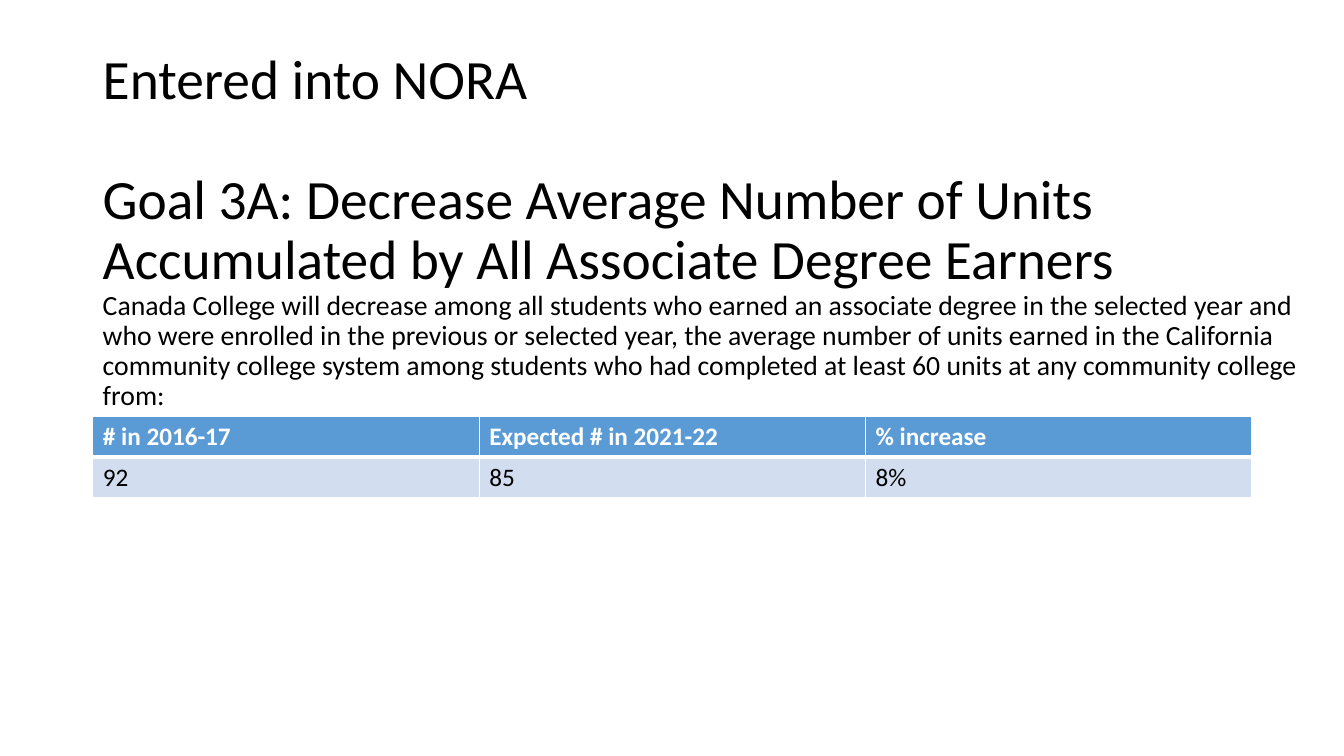
from lxml import etree
from pptx import Presentation
from pptx import util as u
from pptx.dml.color import RGBColor
from pptx.enum import text
from pptx.oxml import ns

BLACK = RGBColor(0x00, 0x00, 0x00)
WHITE = RGBColor(0xFF, 0xFF, 0xFF)
HEADER_BLUE = RGBColor(0x5B, 0x9B, 0xD5)
BODY_BLUE = RGBColor(0xD2, 0xDE, 0xEF)

LEFT = u.Cm(2.34)
HEADING_SIZE = 39.6
DETAIL_SIZE = 19.8
BLANK_LINE = 43

TITLE = [
    ("Entered into NORA", HEADING_SIZE, BLANK_LINE),
    ("Goal 3A: Decrease Average Number of Units Accumulated by All "
     "Associate Degree Earners", HEADING_SIZE, 0),
    ("Canada College will decrease among all students who earned an associate "
     "degree in the selected year and who were enrolled in the previous or "
     "selected year, the average number of units earned in the California "
     "community college system among students who had completed at least 60 "
     "units at any community college from:", DETAIL_SIZE, 0),
]
ROWS = [
    ("# in 2016-17", "Expected # in 2021-22", "% increase"),
    ("92", "85", "8%"),
]
ROW_STYLES = [
    {"fill": HEADER_BLUE, "color": WHITE, "bold": True,
     "borders": {"lnL": 1, "lnR": 1, "lnT": 1, "lnB": 3}},
    {"fill": BODY_BLUE, "color": BLACK, "bold": False,
     "borders": {"lnL": 1, "lnR": 1, "lnT": 3, "lnB": 1}},
]


def set_attributes(target, values):
    """Set each named attribute on the target."""
    for name, value in values.items():
        setattr(target, name, value)


def write_run(paragraph, content, size, color, bold=False):
    """Add one formatted run to a paragraph."""
    run = paragraph.add_run()
    run.text = content
    set_attributes(run.font, {"name": "Calibri", "size": u.Pt(size), "bold": bold})
    run.font.color.rgb = color


def add_title(slide):
    """Add the goal heading with its description."""
    shape = slide.shapes.add_textbox(LEFT, u.Cm(3.99), u.Cm(30.73), u.Cm(3.68))
    frame = shape.text_frame
    set_attributes(frame, {"word_wrap": True,
                           "auto_size": text.MSO_AUTO_SIZE.NONE,
                           "vertical_anchor": text.MSO_ANCHOR.MIDDLE})
    for index, (content, size, gap) in enumerate(TITLE):
        paragraph = frame.add_paragraph() if index else frame.paragraphs[0]
        set_attributes(paragraph, {"line_spacing": 0.9, "space_before": u.Pt(0),
                                   "space_after": u.Pt(gap)})
        write_run(paragraph, content, size, BLACK)


def set_borders(cell, widths):
    """Draw white cell borders with the given widths in points."""
    properties = cell._tc.get_or_add_tcPr()
    for position, (side, width) in enumerate(widths.items()):
        line = etree.Element(ns.qn(f"a:{side}"), w=str(u.Pt(width)))
        fill = etree.SubElement(line, ns.qn("a:solidFill"))
        etree.SubElement(fill, ns.qn("a:srgbClr"), val=str(WHITE))
        properties.insert(position, line)


def add_goal_table(slide):
    """Add the table of starting and expected values."""
    table = slide.shapes.add_table(len(ROWS), len(ROWS[0]), LEFT, u.Cm(10.49),
                                   u.Cm(29.21), u.Cm(2.06)).table
    for row_index, (values, style) in enumerate(zip(ROWS, ROW_STYLES)):
        for column_index, value in enumerate(values):
            cell = table.cell(row_index, column_index)
            cell.fill.solid()
            cell.fill.fore_color.rgb = style["fill"]
            set_borders(cell, style["borders"])
            write_run(cell.text_frame.paragraphs[0], value, 18,
                      style["color"], style["bold"])


def main():
    """Build and save the goal slide."""
    presentation = Presentation()
    set_attributes(presentation, {"slide_width": u.Cm(33.87),
                                  "slide_height": u.Cm(19.05)})
    slide = presentation.slides.add_slide(presentation.slide_layouts[6])
    add_title(slide)
    add_goal_table(slide)
    presentation.save("out.pptx")


if __name__ == "__main__":
    main()
